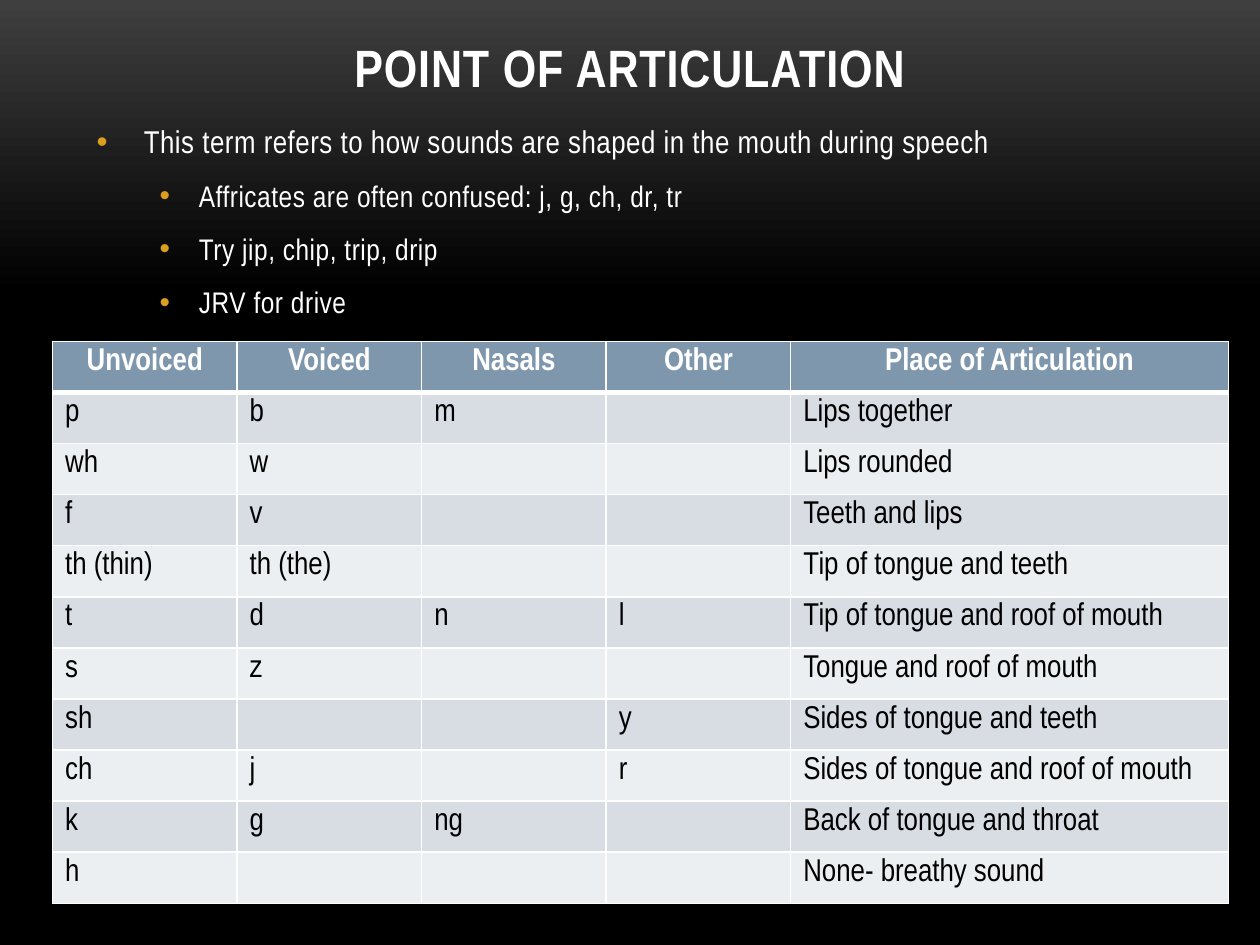
import copy

import pptx
import pptx.dml.color
import pptx.enum.text
import pptx.oxml
import pptx.oxml.ns
import pptx.util

Cm = pptx.util.Cm
Pt = pptx.util.Pt
RGBColor = pptx.dml.color.RGBColor
ALIGN = pptx.enum.text.PP_ALIGN
SPACE = pptx.oxml.ns.nsdecls("a")

WHITE = RGBColor(0xFF, 0xFF, 0xFF)
BLACK = RGBColor(0x00, 0x00, 0x00)
SMOKE = RGBColor(0x3F, 0x3F, 0x3F)
GOLD = RGBColor(0xDC, 0x9E, 0x1F)
STEEL = RGBColor(0x7E, 0x97, 0xAD)
MIST = RGBColor(0xD8, 0xDD, 0xE3)
PALE = RGBColor(0xEC, 0xEF, 0xF1)


def add_run(para, text, size, color, bold=False, track=0):
    """Add one run; track is the letter spacing in hundredths of a point."""
    run = para.add_run()
    run.text = text
    run.font.name = "Arial Narrow"
    run.font.size = Pt(size)
    run.font.bold = bold
    run.font.color.rgb = color
    if track:
        run.font._element.set("spc", str(track))


def add_edge(cell, side, width):
    cell._tc.get_or_add_tcPr().append(pptx.oxml.parse_xml(
        f'<a:ln{side} {SPACE} w="{Pt(width)}"><a:solidFill>'
        f'<a:srgbClr val="{WHITE}"/></a:solidFill></a:ln{side}>'))


deck = pptx.Presentation()
deck.slide_width = Cm(25.4)
deck.slide_height = Cm(19.05)
slide = deck.slides.add_slide(deck.slide_layouts[6])

# Background: dark grey fading to black, then black to the foot
back = slide.background.fill
back.gradient()
back.gradient_angle = 270
for stop, place, color in zip(back.gradient_stops, (0, 0.31), (SMOKE, BLACK)):
    stop.position = place
    stop.color.rgb = color
stops = slide.element.find(".//" + pptx.oxml.ns.qn("a:gsLst"))
stops.append(copy.deepcopy(stops[-1]))
back.gradient_stops[2].position = 1

# Title
title = slide.shapes.add_textbox(Cm(1.7), Cm(-1.07), Cm(22), Cm(3.18)).text_frame
title.word_wrap = True
title.vertical_anchor = pptx.enum.text.MSO_ANCHOR.BOTTOM
para = title.paragraphs[0]
para.alignment = ALIGN.CENTER
add_run(para, "POINT OF ARTICULATION", 30, WHITE, True, 50)

# Bullets
points = [
    (0, "This term refers to how sounds are shaped in the mouth during speech"),
    (1, "Affricates are often confused: j, g, ch, dr, tr"),
    (1, "Try jip, chip, trip, drip"),
    (1, "JRV for drive"),
]
body = slide.shapes.add_textbox(Cm(1.7), Cm(2.34), Cm(22), Cm(5.5)).text_frame
body.word_wrap = True
for i, (level, text) in enumerate(points):
    para = body.paragraphs[0] if i == 0 else body.add_paragraph()
    para.level = level
    props = para._p.get_or_add_pPr()
    left, hang = ((0.95, 0.95), (2.06, 0.79))[level]
    props.set("marL", str(Cm(left)))
    props.set("indent", str(-Cm(hang)))
    for mark in (f'<a:buClr {SPACE}><a:srgbClr val="{GOLD}"/></a:buClr>',
                 f'<a:buFont {SPACE} typeface="Arial"/>',
                 f'<a:buChar {SPACE} char="•"/>'):
        props.append(pptx.oxml.parse_xml(mark))
    para.space_before = Pt(4 if i else 0)
    para.space_after = Pt(6)
    add_run(para, text, 18 - level, WHITE, track=30)

# Table of sounds
sounds = [
    ("Unvoiced", "Voiced", "Nasals", "Other", "Place of Articulation"),
    ("p", "b", "m", "", "Lips together"),
    ("wh", "w", "", "", "Lips rounded"),
    ("f", "v", "", "", "Teeth and lips"),
    ("th (thin)", "th (the)", "", "", "Tip of tongue and teeth"),
    ("t", "d", "n", "l", "Tip of tongue and roof of mouth"),
    ("s", "z", "", "", "Tongue and roof of mouth"),
    ("sh", "", "", "y", "Sides of tongue and teeth"),
    ("ch", "j", "", "r", "Sides of tongue and roof of mouth"),
    ("k", "g", "ng", "", "Back of tongue and throat"),
    ("h", "", "", "", "None- breathy sound"),
]
table = slide.shapes.add_table(len(sounds), 5, Cm(1.06), Cm(6.88),
                               Cm(23.7), Cm(11.33)).table
for col, width in zip(table.columns, (3.72, 3.72, 3.72, 3.72, 8.82)):
    col.width = Cm(width)
for r, words in enumerate(sounds):
    head = r == 0
    table.rows[r].height = Cm(1.03)
    for c, text in enumerate(words):
        cell = table.cell(r, c)
        for side in "LRTB":
            thick = (head and side == "B") or (r == 1 and side == "T")
            add_edge(cell, side, 3 if thick else 1)
        cell.fill.solid()
        cell.fill.fore_color.rgb = STEEL if head else (PALE, MIST)[r % 2]
        para = cell.text_frame.paragraphs[0]
        para.alignment = ALIGN.CENTER if head else ALIGN.LEFT
        if text:
            add_run(para, text, 18, WHITE if head else BLACK, head)

deck.save("out.pptx")
